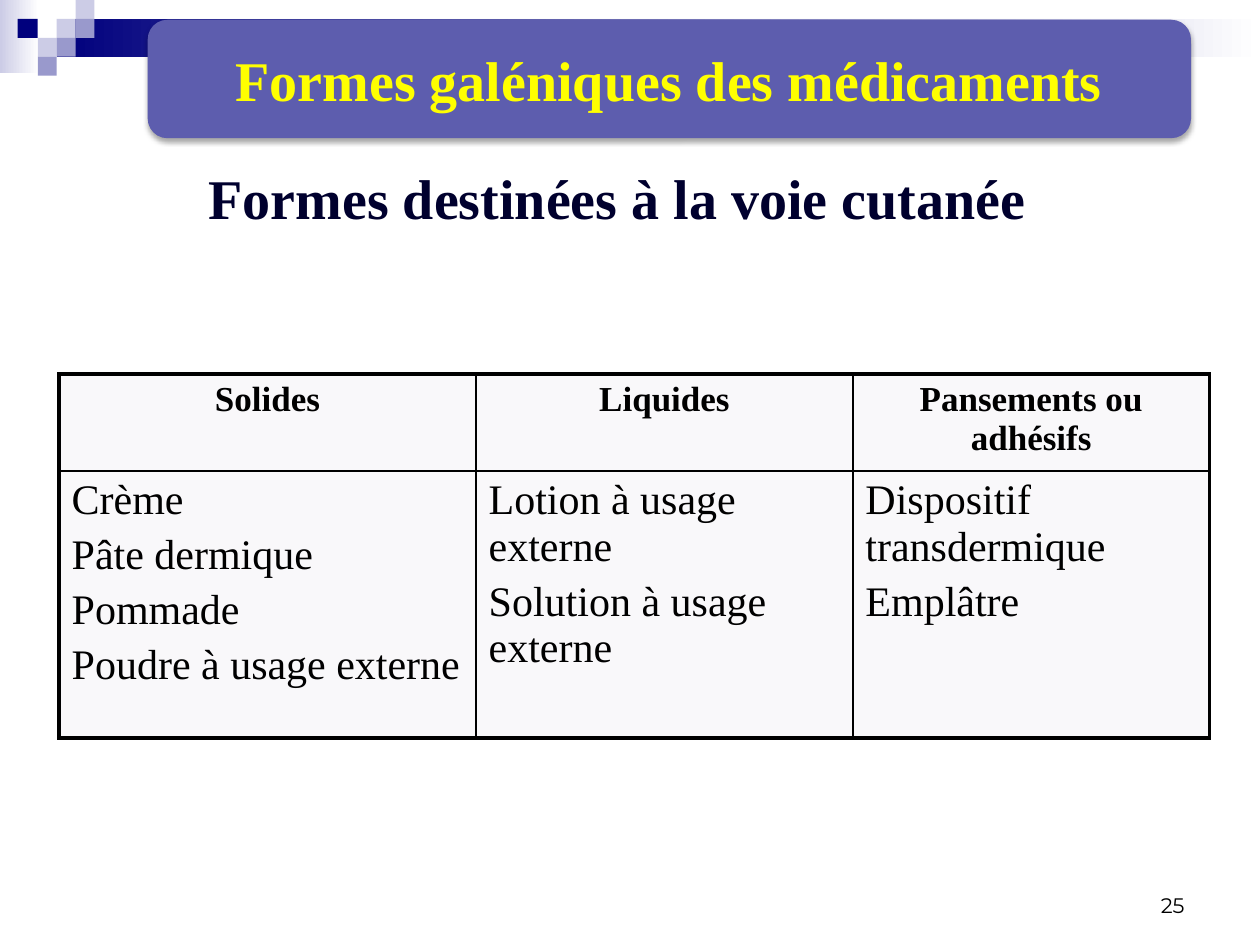
"""Build a slide that tabulates the galenic forms for cutaneous use."""
from dataclasses import dataclass
from typing import Optional

from lxml import etree
from pptx import Presentation
from pptx.dml.color import RGBColor
from pptx.enum import shapes, text
from pptx.oxml import ns
from pptx.util import Pt

BLACK = RGBColor(0x00, 0x00, 0x00)
WHITE = RGBColor(0xFF, 0xFF, 0xFF)
NAVY = RGBColor(0x00, 0x00, 0x7D)
INK = RGBColor(0x00, 0x00, 0x2E)
LILAC = RGBColor(0xCC, 0xCC, 0xE6)
LAVENDER = RGBColor(0x99, 0x99, 0xCC)
VIOLET = RGBColor(0x5D, 0x5D, 0xAE)
YELLOW = RGBColor(0xFF, 0xFF, 0x00)
CELL = RGBColor(0xF9, 0xF8, 0xFA)
SERIF = "Times New Roman"
TILE = 10.8
THIN, THICK = 1, 2.25


@dataclass
class Block:
    left: float
    top: float
    width: float
    height: float
    color: RGBColor
    fade_to: Optional[RGBColor] = None


@dataclass
class Style:
    size: float
    color: RGBColor = BLACK
    bold: bool = False
    font: str = SERIF
    align: text.PP_ALIGN = text.PP_ALIGN.CENTER
    before: float = 0


@dataclass
class Column:
    width: float
    heading: str
    forms: list[str]


TITLE = Style(32, INK, True)
BANNER = Style(32, YELLOW, True)
HEADING = Style(20, bold=True, before=4)
FORM = Style(24, align=text.PP_ALIGN.LEFT, before=4.8)
NUMBER = Style(12, font="Montserrat", align=text.PP_ALIGN.RIGHT)

BLOCKS = [
    Block(0, 0, 22.3, 41.8, LILAC, WHITE),
    Block(3 * TILE, TILE, 687.6, 2 * TILE, NAVY, WHITE),
    Block(10.1, TILE, 11.5, TILE, NAVY),
] + [
    Block(column * TILE, row * TILE, TILE, TILE, color)
    for column, row, color in [
        (3, 1, LILAC), (4, 0, LILAC), (4, 1, LAVENDER),
        (2, 2, LILAC), (3, 2, LAVENDER), (2, 3, LAVENDER),
    ]
]
COLUMNS = [
    Column(238.3, "Solides", ["Crème", "Pâte dermique", "Pommade", "Poudre à usage externe"]),
    Column(215.3, "Liquides", ["Lotion à usage externe", "Solution à usage externe"]),
    Column(203.8, "Pansements ou adhésifs", ["Dispositif transdermique", "Emplâtre"]),
]
ROW_HEIGHTS = [55.4, 152.6]


def write(frame, lines: list[str], style: Style) -> None:
    """Fill a text frame with one paragraph per line."""
    frame.text = "\n".join(lines)
    frame.word_wrap = True
    for para in frame.paragraphs:
        para.alignment = style.align
        para.space_before = Pt(style.before)
        for span in para.runs:
            span.font.name = style.font
            span.font.size = Pt(style.size)
            span.font.bold = style.bold
            span.font.color.rgb = style.color


def add_block(page, block: Block, kind=shapes.MSO_SHAPE.RECTANGLE):
    """Draw a borderless block with a solid or fading fill."""
    shape = page.shapes.add_shape(
        kind, Pt(block.left), Pt(block.top), Pt(block.width), Pt(block.height))
    shape.shadow.inherit = False
    shape.line.fill.background()
    if block.fade_to is None:
        shape.fill.solid()
        shape.fill.fore_color.rgb = block.color
    else:
        shape.fill.gradient()
        shape.fill.gradient_angle = 0
        for stop, color in zip(shape.fill.gradient_stops, (block.color, block.fade_to)):
            stop.color.rgb = color
    return shape


def add_banner(page) -> None:
    """Draw the rounded banner with its soft shadow."""
    banner = add_block(page, Block(84.4, 11.3, 596.2, 67.7, VIOLET),
                       shapes.MSO_SHAPE.ROUNDED_RECTANGLE)
    effects = banner._element.spPr.find(ns.qn("a:effectLst"))
    shadow = etree.SubElement(effects, ns.qn("a:outerShdw"), blurRad=str(Pt(3.1)),
                              dist=str(Pt(1.8)), dir="5400000", rotWithShape="0")
    color = etree.SubElement(shadow, ns.qn("a:srgbClr"), val=str(BLACK))
    etree.SubElement(color, ns.qn("a:alpha"), val="35000")
    write(banner.text_frame, ["Formes galéniques des médicaments"], BANNER)
    banner.text_frame.vertical_anchor = text.MSO_ANCHOR.MIDDLE


def set_borders(cell, widths: dict[str, float]) -> None:
    """Give each side of a cell a black line."""
    properties = cell._tc.get_or_add_tcPr()
    for side, width in widths.items():
        line = etree.SubElement(properties, ns.qn(f"a:ln{side}"), w=str(Pt(width)))
        fill = etree.SubElement(line, ns.qn("a:solidFill"))
        etree.SubElement(fill, ns.qn("a:srgbClr"), val=str(BLACK))


def add_forms_table(page) -> None:
    """Draw the table with a thick frame and thin inner lines."""
    total = sum(column.width for column in COLUMNS)
    table = page.shapes.add_table(
        len(ROW_HEIGHTS), len(COLUMNS), Pt(33.8), Pt(213.8),
        Pt(total), Pt(sum(ROW_HEIGHTS))).table
    table.first_row = table.horz_banding = False
    for row, height in zip(table.rows, ROW_HEIGHTS):
        row.height = Pt(height)
    last_row, last_column = len(ROW_HEIGHTS) - 1, len(COLUMNS) - 1
    for x, column in enumerate(COLUMNS):
        table.columns[x].width = Pt(column.width)
        for y, (lines, style) in enumerate([([column.heading], HEADING), (column.forms, FORM)]):
            cell = table.cell(y, x)
            set_borders(cell, {
                "L": THICK if x == 0 else THIN,
                "R": THICK if x == last_column else THIN,
                "T": THICK if y == 0 else THIN,
                "B": THICK if y == last_row else THIN,
            })
            cell.fill.solid()
            cell.fill.fore_color.rgb = CELL
            write(cell.text_frame, lines, style)


def main() -> None:
    """Assemble and save the deck."""
    deck = Presentation()
    deck.slide_width, deck.slide_height = Pt(720), Pt(540)
    page = deck.slides.add_slide(deck.slide_layouts[5])
    for block in BLOCKS:
        add_block(page, block)

    number = page.shapes.add_textbox(Pt(516), Pt(492), Pt(168), Pt(36))
    write(number.text_frame, ["25"], NUMBER)
    number.text_frame.vertical_anchor = text.MSO_ANCHOR.BOTTOM

    add_banner(page)
    add_forms_table(page)

    title = page.shapes.title
    title.left, title.top, title.width, title.height = Pt(0), Pt(67.7), Pt(705.6), Pt(90)
    write(title.text_frame, ["Formes destinées à la voie cutanée"], TITLE)
    title.text_frame.auto_size = text.MSO_AUTO_SIZE.NONE
    title.text_frame.vertical_anchor = text.MSO_ANCHOR.MIDDLE
    deck.save("out.pptx")


if __name__ == "__main__":
    main()
